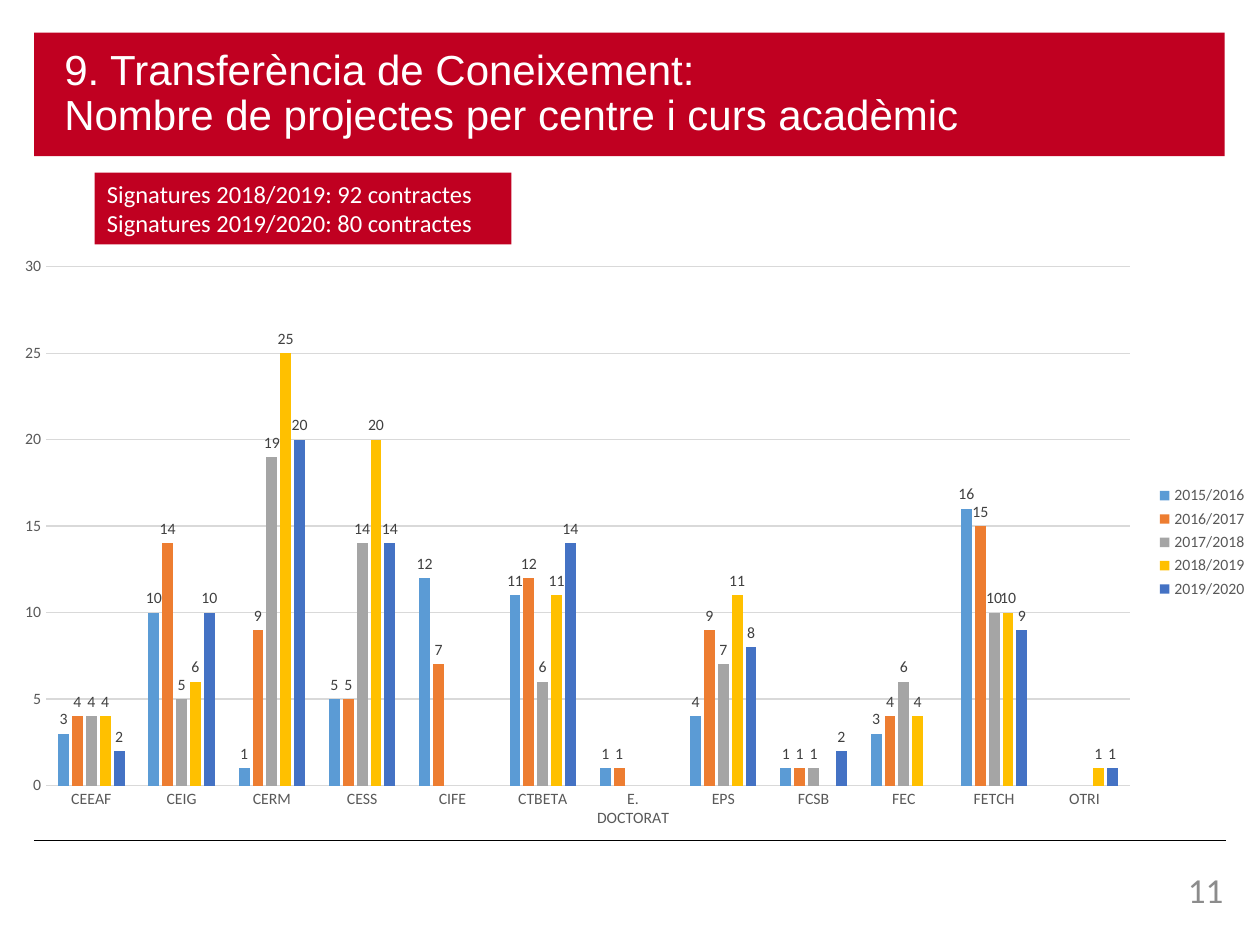
"""Build the slide on projects per centre and academic year."""
from dataclasses import dataclass

import pptx
import pptx.chart.data
import pptx.dml.color
import pptx.enum.chart
import pptx.enum.shapes
import pptx.enum.text
import pptx.oxml
import pptx.util

RGBColor = pptx.dml.color.RGBColor
CRIMSON = RGBColor(0xC0, 0x00, 0x21)
WHITE = RGBColor(0xFF, 0xFF, 0xFF)
BLACK = RGBColor(0x00, 0x00, 0x00)
PAGE_GREY = RGBColor(0x8C, 0x8C, 0x8C)
AXIS_GREY = RGBColor(0x59, 0x59, 0x59)
LABEL_GREY = RGBColor(0x40, 0x40, 0x40)
GRID_GREY = RGBColor(0xD9, 0xD9, 0xD9)
BLUE = RGBColor(0x5B, 0x9B, 0xD5)
ORANGE = RGBColor(0xED, 0x7D, 0x31)
GREY = RGBColor(0xA5, 0xA5, 0xA5)
GOLD = RGBColor(0xFF, 0xC0, 0x00)
NAVY = RGBColor(0x44, 0x72, 0xC4)

WIDTH, HEIGHT = pptx.util.Inches(10), pptx.util.Inches(7.5)
COLUMNS, ROWS = 100, 75
CENTRES = ("CEEAF", "CEIG", "CERM", "CESS", "CIFE", "CTBETA",
           "E. DOCTORAT", "EPS", "FCSB", "FEC", "FETCH", "OTRI")


@dataclass(frozen=True)
class Area:
    """A block of grid cells."""
    column: float
    row: float
    columns: float
    rows: float

    def box(self) -> tuple[int, int, int, int]:
        """Return left, top, width and height in EMU."""
        return (int(WIDTH * self.column / COLUMNS), int(HEIGHT * self.row / ROWS),
                int(WIDTH * self.columns / COLUMNS), int(HEIGHT * self.rows / ROWS))


@dataclass(frozen=True)
class Year:
    """Projects of one academic year, by centre."""
    name: str
    colour: RGBColor
    projects: tuple


@dataclass(frozen=True)
class Panel:
    """A block of text with its frame, paragraph and font formats."""
    area: Area
    paragraphs: tuple
    frame: dict
    paragraph: dict
    font: dict
    colour: RGBColor
    fill: RGBColor | None = None


YEARS = (
    Year("2015/2016", BLUE, (3, 10, 1, 5, 12, 11, 1, 4, 1, 3, 16, None)),
    Year("2016/2017", ORANGE, (4, 14, 9, 5, 7, 12, 1, 9, 1, 4, 15, None)),
    Year("2017/2018", GREY, (4, 5, 19, 14, None, 6, None, 7, 1, 6, 10, None)),
    Year("2018/2019", GOLD, (4, 6, 25, 20, None, 11, None, 11, None, 4, 10, 1)),
    Year("2019/2020", NAVY, (2, 10, 20, 14, None, 14, None, 8, 2, None, 9, 1)),
)

PANELS = (
    Panel(Area(2.7, 2.6, 94.5, 9.8),
          (("9. Transferència de Coneixement:",
            "Nombre de projectes per centre i curs acadèmic"),),
          {"margin_left": pptx.util.Inches(0.24),
           "vertical_anchor": pptx.enum.text.MSO_ANCHOR.MIDDLE},
          {"line_spacing": 0.9, "alignment": pptx.enum.text.PP_ALIGN.LEFT},
          {"size": pptx.util.Pt(24), "name": "Arial"}, WHITE, CRIMSON),
    Panel(Area(89.8, 68.9, 7.3, 4), (("11",),),
          dict.fromkeys(("margin_left", "margin_top", "margin_right", "margin_bottom"), 0),
          {"alignment": pptx.enum.text.PP_ALIGN.RIGHT},
          {"size": pptx.util.Pt(20), "name": "Calibri"}, PAGE_GREY),
    Panel(Area(7.5, 13.7, 33.1, 5.7),
          (("Signatures 2018/2019: 92 contractes",),
           ("Signatures 2019/2020: 80 contractes",)),
          {"vertical_anchor": pptx.enum.text.MSO_ANCHOR.TOP,
           "auto_size": pptx.enum.text.MSO_AUTO_SIZE.SHAPE_TO_FIT_TEXT},
          {"alignment": pptx.enum.text.PP_ALIGN.LEFT},
          {"size": pptx.util.Pt(14), "name": "Calibri"}, WHITE, CRIMSON),
)


def apply(target: object, formats: dict) -> None:
    """Set each format value on the target."""
    for attribute, value in formats.items():
        setattr(target, attribute, value)


def style_font(font: object, colour: RGBColor, size: float = 9, name: str = "Calibri") -> None:
    """Give a font its size, face and colour."""
    apply(font, {"size": pptx.util.Pt(size), "name": name})
    font.color.rgb = colour


def draw_panel(slide: object, panel: Panel) -> None:
    """Draw a text panel, filled when it has a fill."""
    if panel.fill is None:
        block = slide.shapes.add_textbox(*panel.area.box())
    else:
        block = slide.shapes.add_shape(
            pptx.enum.shapes.MSO_SHAPE.RECTANGLE, *panel.area.box())
        block.shadow.inherit = False
        block.fill.solid()
        block.fill.fore_color.rgb = panel.fill
        block.line.fill.background()
    frame = block.text_frame
    apply(frame, {"word_wrap": True, **panel.frame})
    for index, lines in enumerate(panel.paragraphs):
        paragraph = frame.add_paragraph() if index else frame.paragraphs[0]
        apply(paragraph, panel.paragraph)
        for number, text in enumerate(lines):
            if number:
                paragraph.add_line_break()
            run = paragraph.add_run()
            run.text = text
            apply(run.font, panel.font)
            run.font.color.rgb = panel.colour


def draw_rule(slide: object, area: Area) -> None:
    """Draw the thin footer rule."""
    left, top, width, height = area.box()
    rule = slide.shapes.add_connector(
        pptx.enum.shapes.MSO_CONNECTOR.STRAIGHT, left, top, left + width, top + height)
    rule.line.color.rgb = BLACK
    rule.line.width = pptx.util.Pt(0.5)
    rule._element.spPr.append(pptx.oxml.parse_xml(
        '<a:effectLst xmlns:a="http://schemas.openxmlformats.org/drawingml/2006/main"/>'))


def style_axes(chart: object) -> None:
    """Format both axes and the gridlines."""
    centres, projects = chart.category_axis, chart.value_axis
    for axis in (centres, projects):
        axis.major_tick_mark = pptx.enum.chart.XL_TICK_MARK.NONE
        style_font(axis.tick_labels.font, AXIS_GREY)
    apply(projects, {"minimum_scale": 0, "maximum_scale": 30, "major_unit": 5,
                     "has_major_gridlines": True})
    projects.format.line.fill.background()
    for line in (centres.format.line, projects.major_gridlines.format.line):
        line.color.rgb = GRID_GREY
        line.width = pptx.util.Pt(0.75)


def draw_chart(slide: object, area: Area, years: tuple) -> None:
    """Draw the clustered columns of projects per centre."""
    data = pptx.chart.data.CategoryChartData()
    data.categories = CENTRES
    for year in years:
        data.add_series(year.name, year.projects)
    chart = slide.shapes.add_chart(
        pptx.enum.chart.XL_CHART_TYPE.COLUMN_CLUSTERED, *area.box(), data).chart
    style_font(chart.font, BLACK, 10)
    apply(chart, {"has_title": False, "has_legend": True})
    apply(chart.legend, {"position": pptx.enum.chart.XL_LEGEND_POSITION.RIGHT,
                         "include_in_layout": False})
    style_font(chart.legend.font, AXIS_GREY)
    style_axes(chart)
    plot = chart.plots[0]
    apply(plot, {"gap_width": 219, "overlap": -27, "vary_by_categories": False})
    for series, year in zip(plot.series, years):
        series.format.fill.solid()
        series.format.fill.fore_color.rgb = year.colour
        apply(series.data_labels, {
            "show_value": True,
            "position": pptx.enum.chart.XL_LABEL_POSITION.OUTSIDE_END})
        style_font(series.data_labels.font, LABEL_GREY)


def main() -> None:
    """Build and save the slide."""
    deck = pptx.Presentation()
    apply(deck, {"slide_width": WIDTH, "slide_height": HEIGHT})
    slide = deck.slides.add_slide(deck.slide_layouts[6])
    draw_rule(slide, Area(2.7, 66.7, 94.6, 0))
    draw_chart(slide, Area(0, 19.5, 100, 47.1), YEARS)
    for panel in PANELS:
        draw_panel(slide, panel)
    deck.save("out.pptx")


if __name__ == "__main__":
    main()
